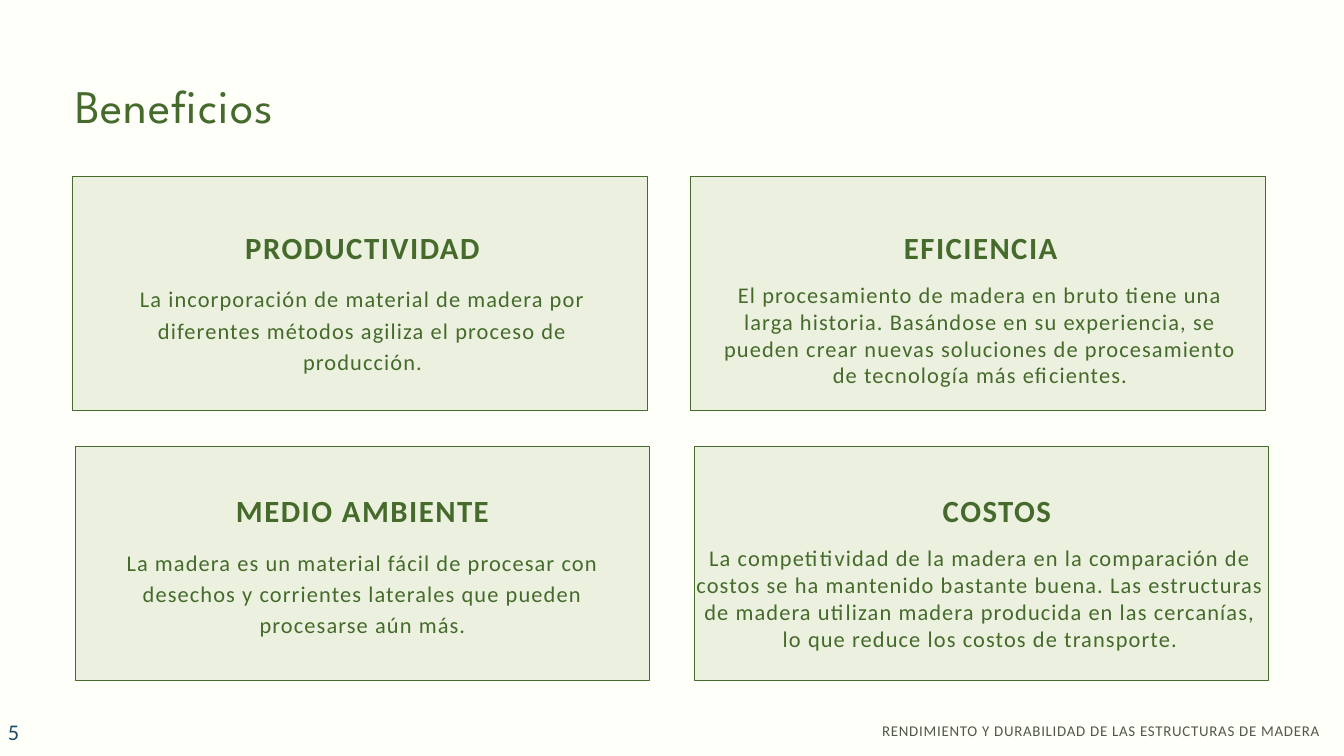
from dataclasses import dataclass
from typing import NamedTuple, Optional

from pptx import Presentation
from pptx import util as u
from pptx.dml.color import RGBColor
from pptx.enum import shapes, text


class Style(NamedTuple):
    size: float
    color: str
    tracking: float  # letter spacing in points
    line: Optional[float] = None  # exact line height in points
    bold: bool = False
    font: str = "Calibri"
    align: text.PP_ALIGN = text.PP_ALIGN.CENTER


class Box(NamedTuple):
    left: float
    top: float
    width: float
    height: float


@dataclass(frozen=True)
class Theme:
    background: str = "FEFFF8"
    panel: str = "EBF1DE"
    green: str = "456A2C"
    title: Style = Style(50, "456A2C", 1, 66.8, font="League Spartan",
                         align=text.PP_ALIGN.LEFT)
    heading: Style = Style(33, "456A2C", 1.6, 41.2, bold=True)
    body: Style = Style(24, "456A2C", 1.2, 33.6)
    dense_body: Style = Style(24, "456A2C", 1.2)
    footer: Style = Style(16, "52584D", 0.8, 22.4, align=text.PP_ALIGN.RIGHT)
    number: Style = Style(24, "1E4D65", 1.2, align=text.PP_ALIGN.LEFT)


@dataclass(frozen=True)
class Benefit:
    heading: str
    body: str
    panel_at: tuple[float, float]
    heading_at: tuple[float, float]
    body_box: Box
    body_style: Style


THEME = Theme()
PANEL_SIZE = (8.55, 3.48)
HEADING_SIZE = (7.39, 0.56)
TOP_ROW, BOTTOM_ROW = 2.62, 6.64
TOP_HEADING, BOTTOM_HEADING = 3.38, 7.3
BODY_DROP = 0.8  # from top of heading to top of body

BENEFITS = [
    Benefit("MEDIO AMBIENTE",
            "La madera es un material fácil de procesar con desechos y corrientes "
            "laterales que pueden procesarse aún más.",
            (1.12, BOTTOM_ROW), (1.7, BOTTOM_HEADING),
            Box(1.7, BOTTOM_HEADING + BODY_DROP, 7.39, 1.4), THEME.body),
    Benefit("PRODUCTIVIDAD",
            "La incorporación de material de madera por diferentes métodos agiliza "
            "el proceso de producción.",
            (1.08, TOP_ROW), (1.7, TOP_HEADING),
            Box(1.7, TOP_HEADING + BODY_DROP, 7.39, 1.4), THEME.body),
    Benefit("EFICIENCIA",
            "El procesamiento de madera en bruto tiene una larga historia. Basándose "
            "en su experiencia, se pueden crear nuevas soluciones de procesamiento "
            "de tecnología más eficientes.",
            (10.28, TOP_ROW), (10.9, TOP_HEADING),
            Box(10.67, TOP_HEADING + BODY_DROP, 7.83, 1.62), THEME.dense_body),
    Benefit("COSTOS",
            "La competitividad de la madera en la comparación de costos se ha "
            "mantenido bastante buena. Las estructuras de madera utilizan madera "
            "producida en las cercanías, lo que reduce los costos de transporte.",
            (10.33, BOTTOM_ROW), (11.14, BOTTOM_HEADING),
            Box(10.33, BOTTOM_HEADING + BODY_DROP, 8.51, 2.02), THEME.dense_body),
]


def rgb(value: str) -> RGBColor:
    return RGBColor.from_string(value)


def inches(box: Box) -> list[u.Length]:
    return [u.Inches(length) for length in box]


def write(frame, words: str, style: Style, margin: float = 0,
          anchor: text.MSO_ANCHOR = text.MSO_ANCHOR.TOP) -> None:
    """Fill a text frame with one paragraph in the given style."""
    frame_format = {"word_wrap": True, "auto_size": text.MSO_AUTO_SIZE.NONE,
                    "vertical_anchor": anchor}
    for side in ("left", "top", "right", "bottom"):
        frame_format[f"margin_{side}"] = u.Inches(margin)
    for name, value in frame_format.items():
        setattr(frame, name, value)

    paragraph = frame.paragraphs[0]
    paragraph.alignment = style.align
    if style.line:
        paragraph.line_spacing = u.Pt(style.line)
    run = paragraph.add_run()
    run.text = words
    font_format = {"size": u.Pt(style.size), "name": style.font, "bold": style.bold}
    for name, value in font_format.items():
        setattr(run.font, name, value)
    run.font.color.rgb = rgb(style.color)
    run._r.get_or_add_rPr().set("spc", str(round(style.tracking * 100)))


def add_text(slide, box: Box, words: str, style: Style, **frame_options) -> None:
    write(slide.shapes.add_textbox(*inches(box)).text_frame, words, style,
          **frame_options)


def add_benefit(slide, benefit: Benefit) -> None:
    """Draw a bordered panel with its heading and explanation."""
    panel = slide.shapes.add_shape(shapes.MSO_SHAPE.RECTANGLE,
                                   *inches(Box(*benefit.panel_at, *PANEL_SIZE)))
    panel.shadow.inherit = False
    panel.fill.solid()
    panel.fill.fore_color.rgb = rgb(THEME.panel)
    panel.line.color.rgb = rgb(THEME.green)
    panel.line.width = u.Pt(0.75)
    add_text(slide, Box(*benefit.heading_at, *HEADING_SIZE),
             benefit.heading, THEME.heading)
    add_text(slide, benefit.body_box, benefit.body, benefit.body_style)


def main() -> None:
    deck = Presentation()
    deck.slide_width, deck.slide_height = u.Inches(20), u.Inches(11.25)
    slide = deck.slides.add_slide(deck.slide_layouts[5])
    slide.background.fill.solid()
    slide.background.fill.fore_color.rgb = rgb(THEME.background)

    # Title
    title = slide.shapes.title
    title.left, title.top, title.width, title.height = inches(Box(1.12, 1.05, 7.75, 0.94))
    write(title.text_frame, "Beneficios", THEME.title)

    # Benefit panels
    for benefit in BENEFITS:
        add_benefit(slide, benefit)

    # Footer and slide number
    add_text(slide, Box(11.33, 10.7, 8.32, 0.29),
             "RENDIMIENTO Y DURABILIDAD DE LAS ESTRUCTURAS DE MADERA", THEME.footer)
    add_text(slide, Box(0.02, 10.69, 2.33, 0.4), "5", THEME.number,
             margin=0.1, anchor=text.MSO_ANCHOR.MIDDLE)

    deck.save("out.pptx")


if __name__ == "__main__":
    main()
